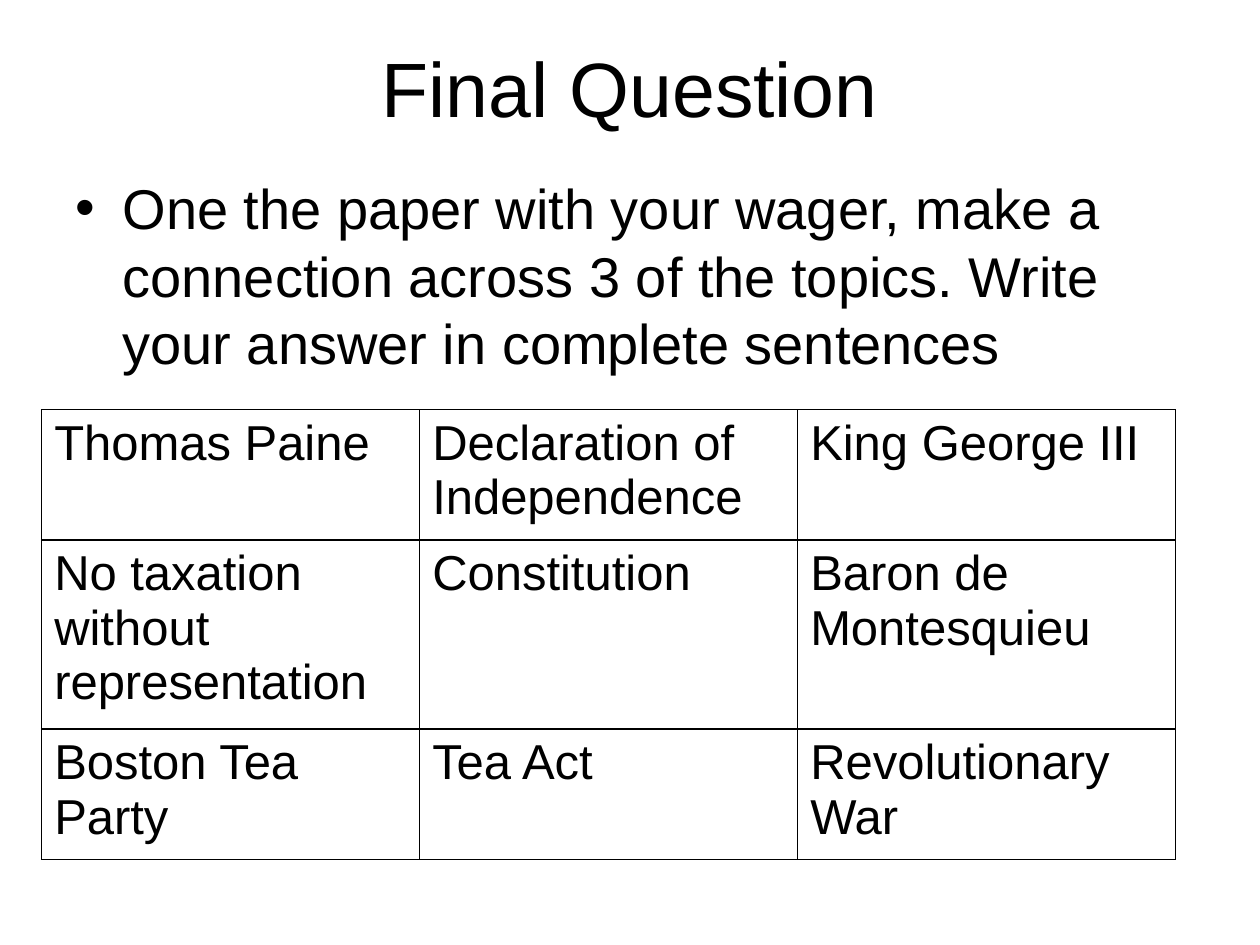
from dataclasses import dataclass

from lxml.etree import SubElement
from pptx import Presentation
from pptx.dml.color import RGBColor
from pptx.enum.text import MSO_ANCHOR as Anchor, PP_ALIGN as Align
from pptx.oxml.ns import qn
from pptx.util import Cm, Pt

FONT = "Arial"
BLACK = "000000"
WHITE = "FFFFFF"
COL_WIDTH = 7.62
ROW_HEIGHTS = [2.62, 3.81, 2.62]
TOPICS = [
    ["Thomas Paine", "Declaration of Independence", "King George III"],
    ["No taxation without representation", "Constitution", "Baron de Montesquieu"],
    ["Boston Tea Party", "Tea Act", "Revolutionary War"],
]


@dataclass
class TextBlock:
    text: str
    top: float
    height: float
    size: int
    align: Align = Align.LEFT
    anchor: Anchor = Anchor.TOP
    bullet: bool = False


BLOCKS = [
    TextBlock("Final Question", 0.76, 1.98, 44, Align.CENTER, Anchor.MIDDLE),
    TextBlock("One the paper with your wager, make a connection across 3 of the topics. "
              "Write your answer in complete sentences", 3.38, 6.07, 32, bullet=True),
]


def rgb(value: str) -> RGBColor:
    return RGBColor.from_string(value)


def add_run(p, text: str, size: int) -> None:
    r = p.add_run()
    r.text = text
    r.font.name = FONT
    r.font.size = Pt(size)
    r.font.color.rgb = rgb(BLACK)


def add_bullet(p) -> None:
    pPr = p._p.get_or_add_pPr()
    pPr.set("marL", str(Cm(0.95)))
    pPr.set("indent", str(-Cm(0.95)))
    before = SubElement(pPr, qn("a:spcBef"))
    SubElement(before, qn("a:spcPct"), val="20000")
    SubElement(pPr, qn("a:buFont"), typeface=FONT)
    SubElement(pPr, qn("a:buChar"), char="•")


def add_block(s, block: TextBlock) -> None:
    sp = s.shapes.add_textbox(Cm(1.27), Cm(block.top), Cm(22.86), Cm(block.height))
    tf = sp.text_frame
    tf.word_wrap = True
    tf.vertical_anchor = block.anchor
    p = tf.paragraphs[0]
    p.alignment = block.align
    if block.bullet:
        add_bullet(p)
    add_run(p, block.text, block.size)


def add_borders(cell) -> None:
    tcPr = cell._tc.get_or_add_tcPr()
    for side in ("lnL", "lnR", "lnT", "lnB"):
        ln = SubElement(tcPr, qn(f"a:{side}"), w=str(Pt(1)))
        fill = SubElement(ln, qn("a:solidFill"))
        SubElement(fill, qn("a:srgbClr"), val=BLACK)


def add_topics(s) -> None:
    cols = len(TOPICS[0])
    table = s.shapes.add_table(len(TOPICS), cols, Cm(0.84), Cm(8.26),
                               Cm(cols * COL_WIDTH), Cm(sum(ROW_HEIGHTS))).table
    table.first_row = table.horz_banding = False
    for col in table.columns:
        col.width = Cm(COL_WIDTH)
    for row, height, texts in zip(table.rows, ROW_HEIGHTS, TOPICS):
        row.height = Cm(height)
        for cell, text in zip(row.cells, texts):
            add_borders(cell)
            cell.fill.background()
            add_run(cell.text_frame.paragraphs[0], text, 28)


def main() -> None:
    """Build the closing question slide with its grid of topics."""
    prs = Presentation()
    prs.slide_width, prs.slide_height = Cm(25.4), Cm(19.05)
    s = prs.slides.add_slide(prs.slide_layouts[6])
    s.background.fill.solid()
    s.background.fill.fore_color.rgb = rgb(WHITE)
    for block in BLOCKS:
        add_block(s, block)
    add_topics(s)
    prs.save("out.pptx")


if __name__ == "__main__":
    main()
